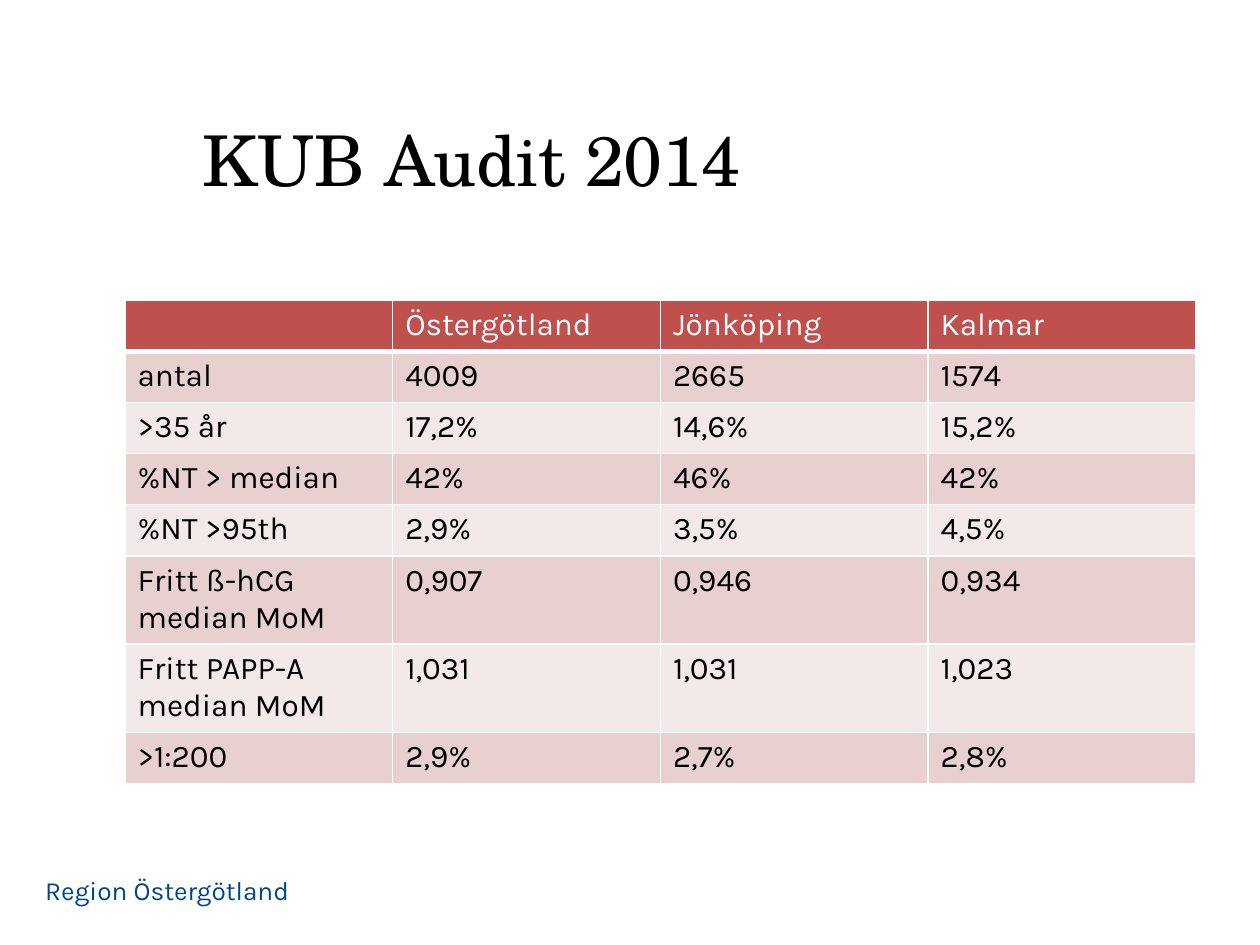
"""Build the KUB Audit 2014 slide with its regional comparison table."""
from lxml.etree import SubElement
from pptx import Presentation
from pptx.dml.color import RGBColor
from pptx.enum.text import MSO_ANCHOR, PP_ALIGN
from pptx.oxml import parse_xml
from pptx.oxml.ns import nsdecls, qn
from pptx.util import Pt

BLACK = RGBColor(0x00, 0x00, 0x00)
WHITE = RGBColor(0xFF, 0xFF, 0xFF)
BLUE = RGBColor(0x00, 0x47, 0x8A)
HEADER_RED = RGBColor(0xC0, 0x50, 0x4D)
BAND_COLOURS = (RGBColor(0xF4, 0xE9, 0xE9), RGBColor(0xE8, 0xD0, 0xD0))

AUDIT_ROWS = [
    ("", "Östergötland", "Jönköping", "Kalmar"),
    ("antal", "4009", "2665", "1574"),
    (">35 år", "17,2%", "14,6%", "15,2%"),
    ("%NT > median", "42%", "46%", "42%"),
    ("%NT >95th", "2,9%", "3,5%", "4,5%"),
    ("Fritt ß-hCG median MoM", "0,907", "0,946", "0,934"),
    ("Fritt PAPP-A median MoM", "1,031", "1,031", "1,023"),
    (">1:200", "2,9%", "2,7%", "2,8%"),
]


class SlideBuilder:
    """Hold the fonts and the current slide, and add elements to it."""

    title_font = "TeX Gyre Schola"
    body_font = "Karla"

    def __init__(self, slide):
        self.slide = slide

    def add_run(self, paragraph, text, size, colour, font_name):
        run = paragraph.add_run()
        run.text = text
        run.font.name = font_name
        run.font.size = Pt(size)
        run.font.bold = False
        run.font.color.rgb = colour

    def add_title(self, text, left, top, width, height):
        title = self.slide.shapes.title
        title.left, title.top = Pt(left), Pt(top)
        title.width, title.height = Pt(width), Pt(height)
        title.text_frame.vertical_anchor = MSO_ANCHOR.MIDDLE
        paragraph = title.text_frame.paragraphs[0]
        paragraph.alignment = PP_ALIGN.LEFT
        self.add_run(paragraph, text, 40, BLACK, self.title_font)

    def add_label(self, text, left, top, width, height):
        box = self.slide.shapes.add_textbox(Pt(left), Pt(top), Pt(width), Pt(height))
        box.text_frame.word_wrap = True
        self.add_run(box.text_frame.paragraphs[0], text, 15, BLUE, self.body_font)

    def set_borders(self, cell, bottom_width):
        properties = cell._tc.get_or_add_tcPr()
        widths = {"lnL": 1, "lnR": 1, "lnT": 1, "lnB": bottom_width}
        for position, (side, width) in enumerate(widths.items()):
            line = parse_xml(f'<a:{side} {nsdecls("a")} w="{Pt(width)}"/>')
            fill = SubElement(line, qn("a:solidFill"))
            SubElement(fill, qn("a:srgbClr"), val=str(WHITE))
            properties.insert(position, line)

    def add_table(self, rows, left, top, column_width, row_height):
        column_count = len(rows[0])
        table = self.slide.shapes.add_table(
            len(rows), column_count, Pt(left), Pt(top),
            Pt(column_width * column_count), Pt(row_height * len(rows))).table
        for row_index, values in enumerate(rows):
            is_header = row_index == 0
            fill_colour = HEADER_RED if is_header else BAND_COLOURS[row_index % 2]
            for column_index, value in enumerate(values):
                cell = table.cell(row_index, column_index)
                cell.fill.solid()
                cell.fill.fore_color.rgb = fill_colour
                self.set_borders(cell, 3 if is_header else 1)
                if value:
                    self.add_run(cell.text_frame.paragraphs[0], value, 18,
                                 WHITE if is_header else BLACK, self.body_font)


def main():
    presentation = Presentation()
    presentation.slide_width, presentation.slide_height = Pt(720), Pt(540)
    builder = SlideBuilder(presentation.slides.add_slide(presentation.slide_layouts[5]))
    builder.add_label("Region Östergötland", 18.7, 496, 265, 25.2)
    builder.add_title("KUB Audit 2014", 108.7, 41, 558.7, 99.4)
    builder.add_table(AUDIT_ROWS, 71.4, 171.6, 153, 29.2)
    presentation.save("out.pptx")


if __name__ == "__main__":
    main()
